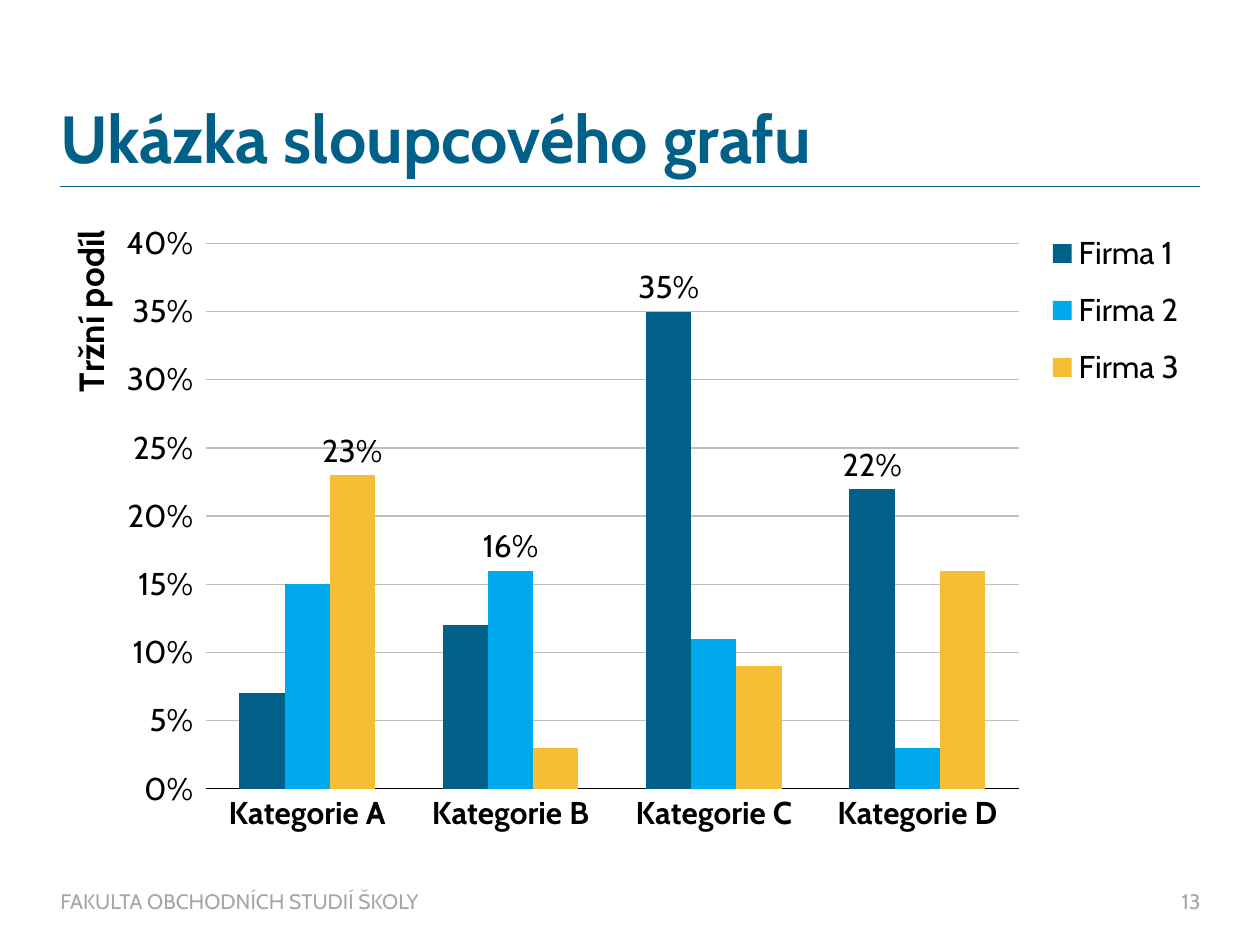
from dataclasses import dataclass
from typing import NamedTuple

from lxml.etree import SubElement
from pptx import Presentation
from pptx.chart.data import CategoryChartData
from pptx.dml.color import RGBColor
from pptx.enum.chart import (XL_CHART_TYPE, XL_LABEL_POSITION,
                             XL_LEGEND_POSITION, XL_TICK_MARK)
from pptx.enum.shapes import MSO_CONNECTOR
from pptx.enum.text import MSO_ANCHOR, PP_ALIGN
from pptx.oxml import parse_xml
from pptx.oxml.ns import nsdecls, qn
from pptx.util import Pt


@dataclass(frozen=True)
class Theme:
    font: str = "Cabin"
    blue: str = "006088"
    cyan: str = "00A8EC"
    yellow: str = "F5BE34"
    black: str = "000000"
    grid: str = "BFBFBF"
    grey: str = "A6A6A6"
    title_size: float = 38
    axis_title_size: float = 20
    chart_size: float = 18
    footer_size: float = 12


class Box(NamedTuple):
    left: float
    top: float
    width: float
    height: float

    def lengths(self):
        return [Pt(value) for value in self]


class Firm(NamedTuple):
    name: str
    shares: tuple
    color: str
    labelled: tuple


THEME = Theme()
PERCENT = "0%"
LEFT, WIDTH = 34.5, 651.5
RIGHT = LEFT + WIDTH
FOOTER_TOP, FOOTER_HEIGHT = 507.5, 14.5
CATEGORIES = [f"Kategorie {letter}" for letter in "ABCD"]
FIRMS = [
    Firm("Firma 1", (0.07, 0.12, 0.35, 0.22), THEME.blue, (2, 3)),
    Firm("Firma 2", (0.15, 0.16, 0.11, 0.03), THEME.cyan, (1,)),
    Firm("Firma 3", (0.23, 0.03, 0.09, 0.16), THEME.yellow, (0,)),
]


def style_font(font, size: float, color: str = THEME.black, bold: bool = False):
    font.name = THEME.font
    font.size = Pt(size)
    font.bold = bold
    font.color.rgb = RGBColor.from_string(color)


def style_line(line, color: str, width: float):
    line.color.rgb = RGBColor.from_string(color)
    line.width = Pt(width)


def write_text(frame, text: str, *, size: float, color: str, bold: bool = False,
               align=PP_ALIGN.LEFT, anchor=MSO_ANCHOR.MIDDLE, spacing: float = 1.0):
    frame.word_wrap = True
    frame.vertical_anchor = anchor
    frame.margin_left = frame.margin_right = 0
    frame.margin_top = frame.margin_bottom = 0
    para = frame.paragraphs[0]
    para.alignment = align
    para.line_spacing = spacing
    span = para.add_run()
    span.text = text
    style_font(span.font, size, color, bold)


def add_title(page, text: str, box: Box):
    title = page.shapes.title
    title.left, title.top, title.width, title.height = box.lengths()
    write_text(title.text_frame, text, size=THEME.title_size, color=THEME.blue,
               bold=True, anchor=MSO_ANCHOR.BOTTOM, spacing=0.9)


def add_rule(page, top: float):
    rule = page.shapes.add_connector(
        MSO_CONNECTOR.STRAIGHT, Pt(LEFT), Pt(top), Pt(RIGHT), Pt(top))
    style_line(rule.line, THEME.blue, 0.25)
    SubElement(rule._element.spPr, qn("a:effectLst"))


def add_footer(page, text: str, box: Box, align=PP_ALIGN.LEFT):
    footer = page.shapes.add_textbox(*box.lengths())
    write_text(footer.text_frame, text, size=THEME.footer_size,
               color=THEME.grey, align=align)


def set_layout(element, *fractions: float, inner: bool = False):
    """Place a chart part by x, y and optional width, height as chart fractions."""
    for old in element.findall(qn("c:layout")):
        element.remove(old)
    target = '<c:layoutTarget val="inner"/>' if inner else ""
    modes = '<c:xMode val="edge"/><c:yMode val="edge"/>'
    places = "".join(f'<c:{key} val="{value}"/>'
                     for key, value in zip("xywh", fractions))
    layout = parse_xml(f'<c:layout {nsdecls("c")}><c:manualLayout>'
                       f'{target}{modes}{places}</c:manualLayout></c:layout>')
    leading = (qn("c:tx"), qn("c:legendPos"))
    element.insert(sum(child.tag in leading for child in element), layout)


def style_series(series, firm: Firm):
    series.invert_if_negative = False
    series.format.fill.solid()
    series.format.fill.fore_color.rgb = RGBColor.from_string(firm.color)
    labels = series.data_labels
    labels.show_value = False
    labels.number_format = PERCENT
    labels.number_format_is_linked = False
    for index in firm.labelled:
        label = series.points[index].data_label
        style_font(label.font, THEME.chart_size)
        label.position = XL_LABEL_POSITION.OUTSIDE_END


def style_axes(chart):
    categories = chart.category_axis
    categories.major_tick_mark = XL_TICK_MARK.NONE
    style_font(categories.tick_labels.font, THEME.chart_size, bold=True)
    style_line(categories.format.line, THEME.black, 0.5)

    values = chart.value_axis
    values.minimum_scale, values.maximum_scale, values.major_unit = 0, 0.4, 0.05
    values.major_tick_mark = XL_TICK_MARK.OUTSIDE
    values.format.line.fill.background()
    values.tick_labels.number_format = PERCENT
    values.tick_labels.number_format_is_linked = False
    style_font(values.tick_labels.font, THEME.chart_size)
    style_line(values.major_gridlines.format.line, THEME.grid, 0.75)
    frame = values.axis_title.text_frame
    span = frame.paragraphs[0].add_run()
    span.text = "Tržní podíl"
    style_font(span.font, THEME.axis_title_size, bold=True)
    body = frame._txBody.find(qn("a:bodyPr"))
    body.set("rot", "-5400000")
    body.set("vert", "horz")


def add_share_chart(page, box: Box):
    data = CategoryChartData(number_format=PERCENT)
    data.categories = CATEGORIES
    for firm in FIRMS:
        data.add_series(firm.name, firm.shares)
    chart = page.shapes.add_chart(
        XL_CHART_TYPE.COLUMN_CLUSTERED, *box.lengths(), data).chart
    chart.has_title = False
    style_font(chart.font, THEME.chart_size)
    plot = chart.plots[0]
    plot.gap_width = 150
    plot.overlap = 0
    plot.vary_by_categories = False
    for series, firm in zip(plot.series, FIRMS):
        style_series(series, firm)
    style_axes(chart)
    chart.has_legend = True
    chart.legend.position = XL_LEGEND_POSITION.RIGHT
    chart.legend.include_in_layout = False
    style_font(chart.legend.font, THEME.chart_size)

    root = chart.element
    set_layout(root.xpath(".//c:plotArea")[0], 0.128, 0.045, 0.713, 0.846, inner=True)
    set_layout(root.xpath(".//c:valAx/c:title")[0], 0, 0.014)
    set_layout(root.xpath(".//c:legend")[0], 0.861, 0.002, 0.13, 0.294)


def main():
    deck = Presentation()
    deck.slide_width, deck.slide_height = Pt(720), Pt(540)
    page = deck.slides.add_slide(deck.slide_layouts[5])
    add_rule(page, 106.5)
    add_title(page, "Ukázka sloupcového grafu", Box(LEFT, 60, WIDTH, 41.5))
    add_share_chart(page, Box(34, 122.5, 652, 368.5))
    add_footer(page, "FAKULTA OBCHODNÍCH STUDIÍ ŠKOLY",
               Box(LEFT, FOOTER_TOP, 551, FOOTER_HEIGHT))
    add_footer(page, "13", Box(RIGHT - 27, FOOTER_TOP, 27, FOOTER_HEIGHT),
               align=PP_ALIGN.RIGHT)
    deck.save("out.pptx")


if __name__ == "__main__":
    main()
